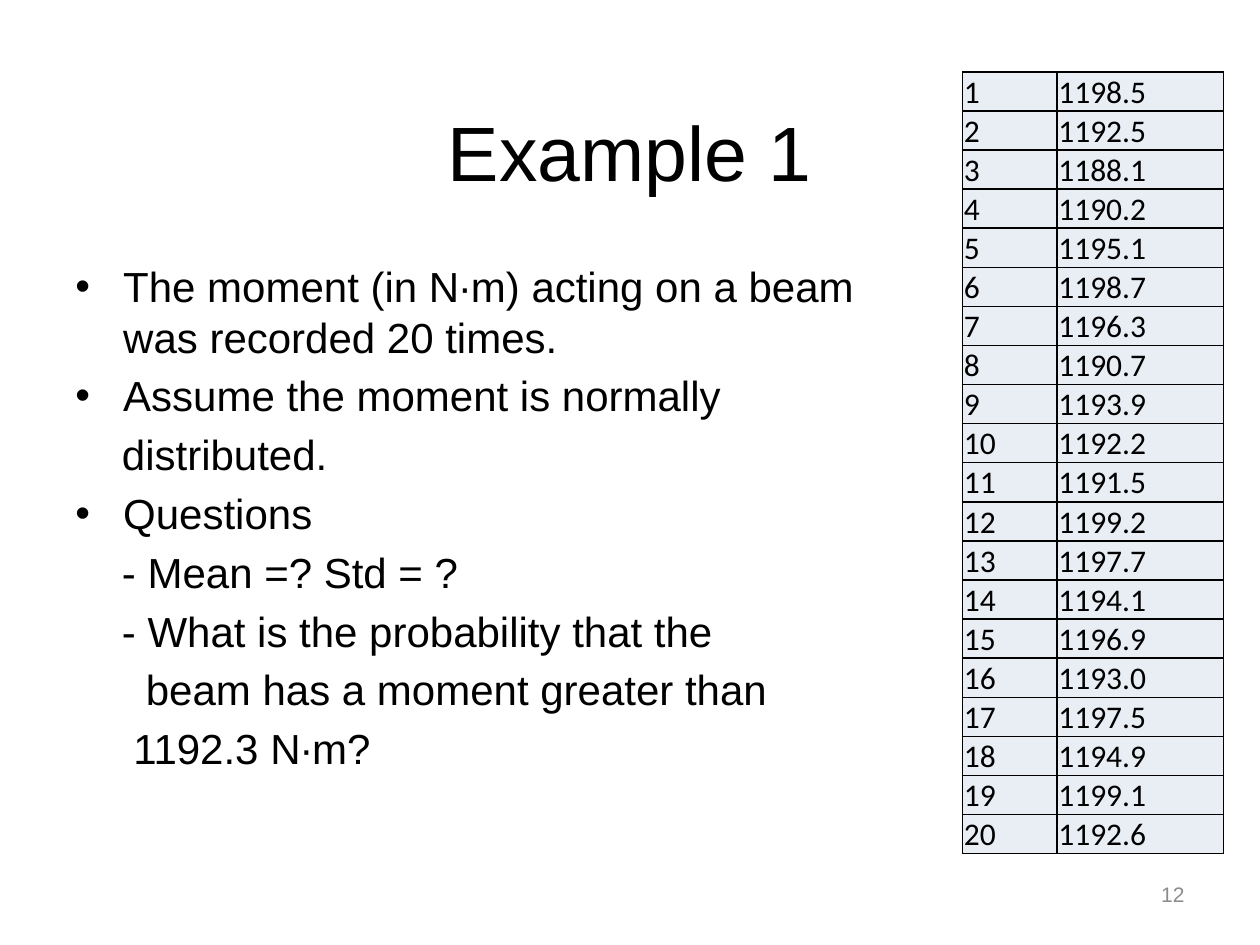
from pptx import Presentation, util as u
from pptx.dml.color import RGBColor
from pptx.enum import text
from pptx.oxml import parse_xml
from pptx.oxml.ns import nsdecls

THEME = {
    "ink": "000000", "cell": "E9EDF4", "muted": "8C8C8C",
    "font": "Arial", "table_font": "Calibri",
    "title": 44, "body": 24, "table": 18, "number": 12, "border": 1,
}

TITLE = "Example 1"
PAGE_NUMBER = "12"
BULLET_INDENT = 0.38
POINTS = [
    ("The moment (in N∙m) acting on a beam was recorded 20 times.", None),
    ("Assume the moment is normally", None),
    ("distributed.", 0.37),
    ("Questions", None),
    ("- Mean =? Std = ?", 0.37),
    ("- What is the probability that the", 0.37),
    ("beam has a moment greater than", 0.56),
    ("1192.3 N∙m?", 0.46),
]
MOMENTS = [
    "1198.5", "1192.5", "1188.1", "1190.2", "1195.1",
    "1198.7", "1196.3", "1190.7", "1193.9", "1192.2",
    "1191.5", "1199.2", "1197.7", "1194.1", "1196.9",
    "1193.0", "1197.5", "1194.9", "1199.1", "1192.6",
]
COLUMN_WIDTHS = [0.75, 1.32]
ROW_HEIGHT = 0.31


def apply(target, values):
    for name, value in values.items():
        setattr(target, name, value)


def write(paragraph, words, size, color="ink", font="font"):
    run = paragraph.add_run()
    run.text = words
    apply(run.font, {"size": u.Pt(THEME[size]), "name": THEME[font]})
    run.font.color.rgb = RGBColor.from_string(THEME[color])


def place(shape, left, top, width, height):
    apply(shape, {"left": u.Inches(left), "top": u.Inches(top),
                  "width": u.Inches(width), "height": u.Inches(height)})


def set_indent(paragraph, indent):
    properties = paragraph._p.get_or_add_pPr()
    margin = BULLET_INDENT if indent is None else indent
    hanging = -BULLET_INDENT if indent is None else 0
    properties.set("marL", str(u.Inches(margin)))
    properties.set("indent", str(u.Inches(hanging)))
    if indent is None:
        properties.append(parse_xml(f'<a:buFont {nsdecls("a")} typeface="Arial"/>'))
        properties.append(parse_xml(f'<a:buChar {nsdecls("a")} char="•"/>'))


def add_title(slide):
    title = slide.shapes.title
    place(title, 0.5, 0.57, 9, 1.25)
    title.text_frame.vertical_anchor = text.MSO_ANCHOR.MIDDLE
    heading = title.text_frame.paragraphs[0]
    heading.alignment = text.PP_ALIGN.CENTER
    write(heading, TITLE, "title")


def add_frame(slide, left, top, width, height, anchor):
    box = slide.shapes.add_textbox(*map(u.Inches, (left, top, width, height)))
    apply(box.text_frame, {"word_wrap": True, "vertical_anchor": anchor})
    return box.text_frame


def add_points(slide):
    body = add_frame(slide, 0.5, 2.02, 6.56, 4.71, text.MSO_ANCHOR.TOP)
    for index, (words, indent) in enumerate(POINTS):
        point = body.add_paragraph() if index else body.paragraphs[0]
        set_indent(point, indent)
        if index:
            point.space_before = u.Pt(0.2 * THEME["body"])
        write(point, words, "body")


def add_borders(cell):
    properties = cell._tc.get_or_add_tcPr()
    for side in ("lnL", "lnR", "lnT", "lnB"):
        properties.append(parse_xml(
            f'<a:{side} {nsdecls("a")} w="{u.Pt(THEME["border"])}"><a:solidFill>'
            f'<a:srgbClr val="{THEME["ink"]}"/></a:solidFill></a:{side}>'))


def add_moments(slide):
    readings = slide.shapes.add_table(
        len(MOMENTS), len(COLUMN_WIDTHS), u.Inches(7.64), u.Inches(0.57),
        u.Inches(sum(COLUMN_WIDTHS)), u.Inches(ROW_HEIGHT * len(MOMENTS))).table
    apply(readings, {"first_row": False, "horz_banding": False})
    for column, width in zip(readings.columns, COLUMN_WIDTHS):
        column.width = u.Inches(width)
    inset = u.Inches(0.01)
    cell_format = {"margin_left": inset, "margin_right": inset, "margin_top": inset,
                   "margin_bottom": 0, "vertical_anchor": text.MSO_ANCHOR.BOTTOM}
    for index, moment in enumerate(MOMENTS):
        readings.rows[index].height = u.Inches(ROW_HEIGHT)
        for cell, words in zip(readings.rows[index].cells, (str(index + 1), moment)):
            apply(cell, cell_format)
            add_borders(cell)
            cell.fill.solid()
            cell.fill.fore_color.rgb = RGBColor.from_string(THEME["cell"])
            write(cell.text_frame.paragraphs[0], words, "table", font="table_font")


def add_page_number(slide):
    number = add_frame(slide, 7.17, 6.9, 2.33, 0.4, text.MSO_ANCHOR.MIDDLE).paragraphs[0]
    number.alignment = text.PP_ALIGN.RIGHT
    write(number, PAGE_NUMBER, "number", "muted")


def main():
    deck = Presentation()
    apply(deck, {"slide_width": u.Inches(10), "slide_height": u.Inches(7.5)})
    slide = deck.slides.add_slide(deck.slide_layouts[5])
    add_title(slide)
    add_points(slide)
    add_moments(slide)
    add_page_number(slide)
    deck.save("out.pptx")


if __name__ == "__main__":
    main()
